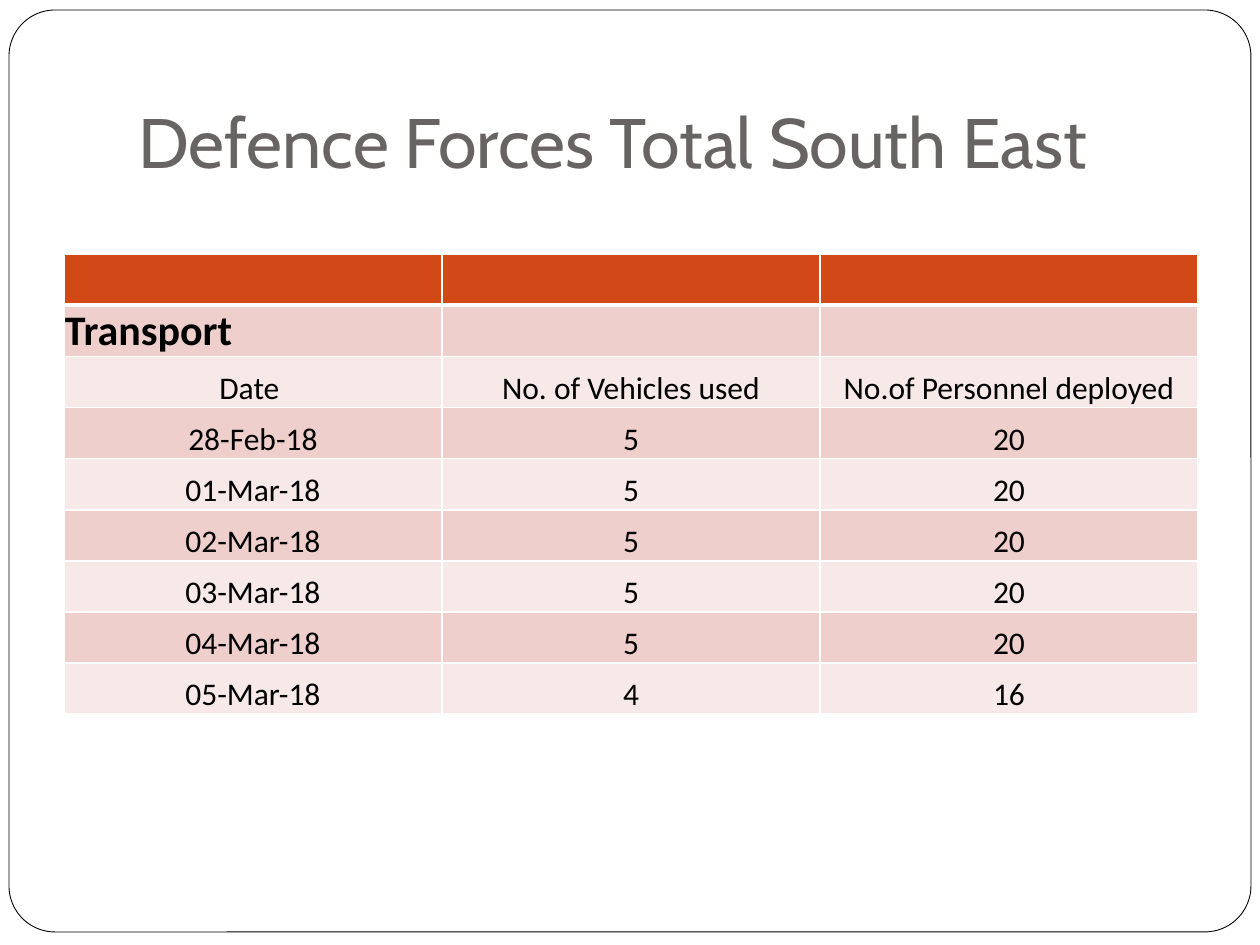
from lxml import etree
from pptx import Presentation
from pptx.dml.color import RGBColor
from pptx.enum.shapes import MSO_SHAPE
from pptx.enum.text import MSO_ANCHOR, PP_ALIGN
from pptx.oxml.ns import qn
from pptx.util import Pt

ROUNDED = MSO_SHAPE.ROUNDED_RECTANGLE
BOTTOM = MSO_ANCHOR.BOTTOM
LEFT, CENTER = PP_ALIGN.LEFT, PP_ALIGN.CENTER
WHITE = RGBColor(0xFF, 0xFF, 0xFF)
BLACK = RGBColor(0x00, 0x00, 0x00)
GREY = RGBColor(0x69, 0x64, 0x64)
ORANGE = RGBColor(0xD3, 0x48, 0x17)
PINK = RGBColor(0xEF, 0xCF, 0xCC)
PALE = RGBColor(0xF7, 0xE9, 0xE8)


def px(n):
    return round(n * 914400 / 126)


def set_borders(cell, widths):
    tcPr = cell._tc.get_or_add_tcPr()
    for i, (side, width) in enumerate(widths.items()):
        ln = etree.Element(qn("a:" + side), w=str(Pt(width)))
        fill = etree.SubElement(ln, qn("a:solidFill"))
        etree.SubElement(fill, qn("a:srgbClr"), val=str(WHITE))
        tcPr.insert(i, ln)


prs = Presentation()
prs.slide_width, prs.slide_height = px(1260), px(945)
s = prs.slides.add_slide(prs.slide_layouts[6])

frame = s.shapes.add_shape(ROUNDED, px(9), px(10), px(1242), px(922))
frame.adjustments[0] = 0.05
frame.shadow.inherit = False
frame.fill.solid()
frame.fill.fore_color.rgb = WHITE
frame.line.color.rgb = BLACK
frame.line.width = Pt(0.5)

title = s.shapes.add_textbox(px(126), px(38), px(1071), px(157))
tf = title.text_frame
tf.word_wrap = True
tf.vertical_anchor = BOTTOM
tf.margin_bottom = px(13)
p = tf.paragraphs[0]
p.text = "Defence Forces Total South East"
p.font.name = "Cabin"
p.font.size = Pt(40)
p.font.color.rgb = GREY

rows = [
    ("", "", ""),
    ("Transport", "", ""),
    ("Date ", "No. of Vehicles used", "No.of Personnel deployed"),
    ("28-Feb-18", "5", "20"),
    ("01-Mar-18", "5", "20"),
    ("02-Mar-18", "5", "20"),
    ("03-Mar-18", "5", "20"),
    ("04-Mar-18", "5", "20"),
    ("05-Mar-18", "4", "16"),
]
table = s.shapes.add_table(len(rows), 3, px(64), px(254), px(1134), px(460)).table
for r, values in enumerate(rows):
    heading = r == 1
    for c, value in enumerate(values):
        cell = table.cell(r, c)
        cell.fill.solid()
        cell.fill.fore_color.rgb = ORANGE if r == 0 else PINK if r % 2 else PALE
        set_borders(cell, {"lnL": 1, "lnR": 1, "lnT": 3 if r == 1 else 1, "lnB": 3 if r == 0 else 1})
        cell.vertical_anchor = BOTTOM
        cell.margin_left = cell.margin_right = cell.margin_top = px(1)
        cell.margin_bottom = 0
        p = cell.text_frame.paragraphs[0]
        p.text = value
        p.alignment = LEFT if heading else CENTER
        p.font.name = "Calibri"
        p.font.size = Pt(24 if heading and value else 18)
        p.font.bold = heading
        p.font.color.rgb = BLACK

prs.save("out.pptx")
